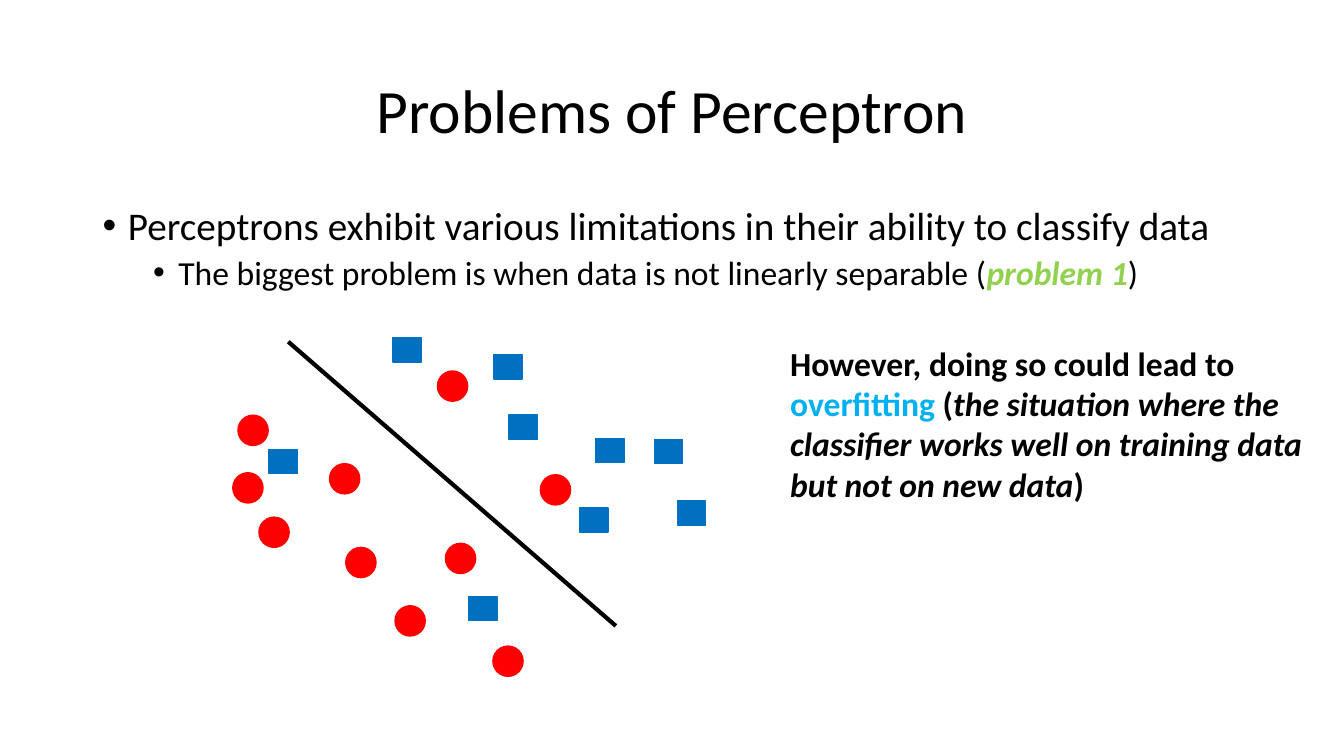
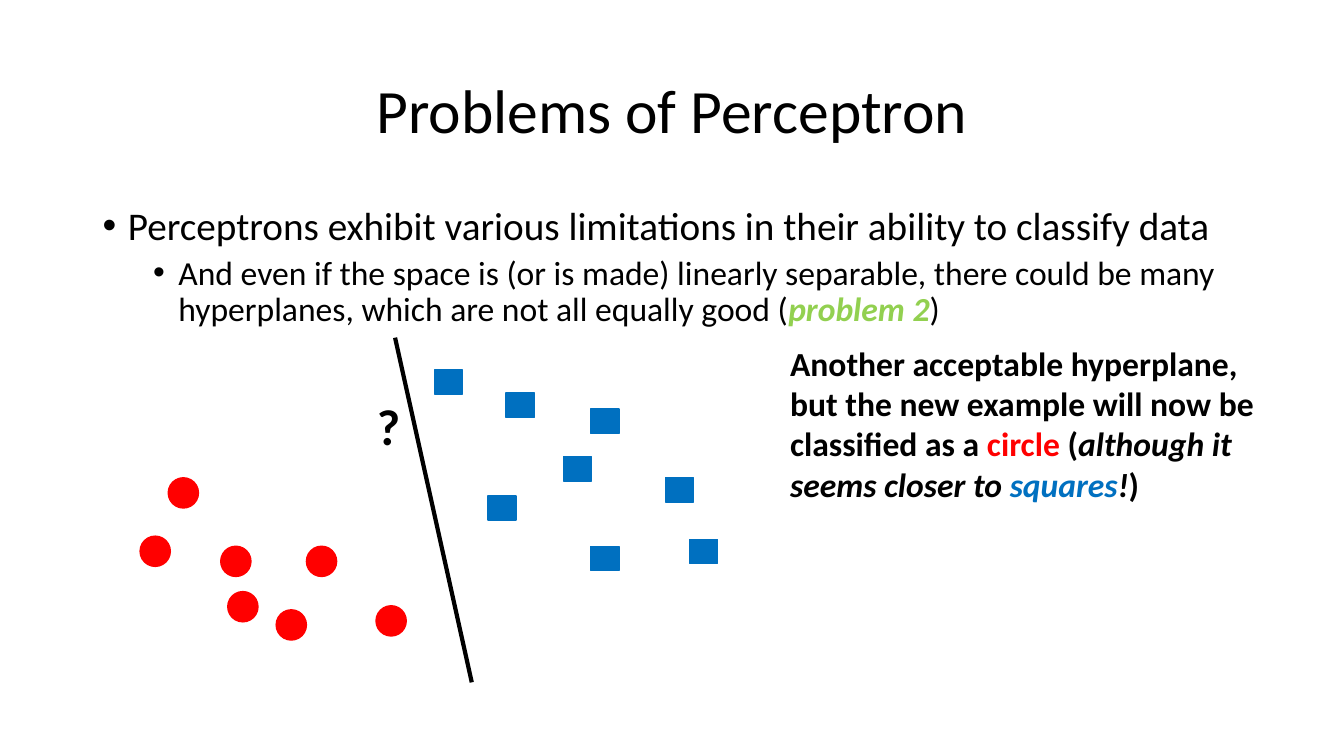
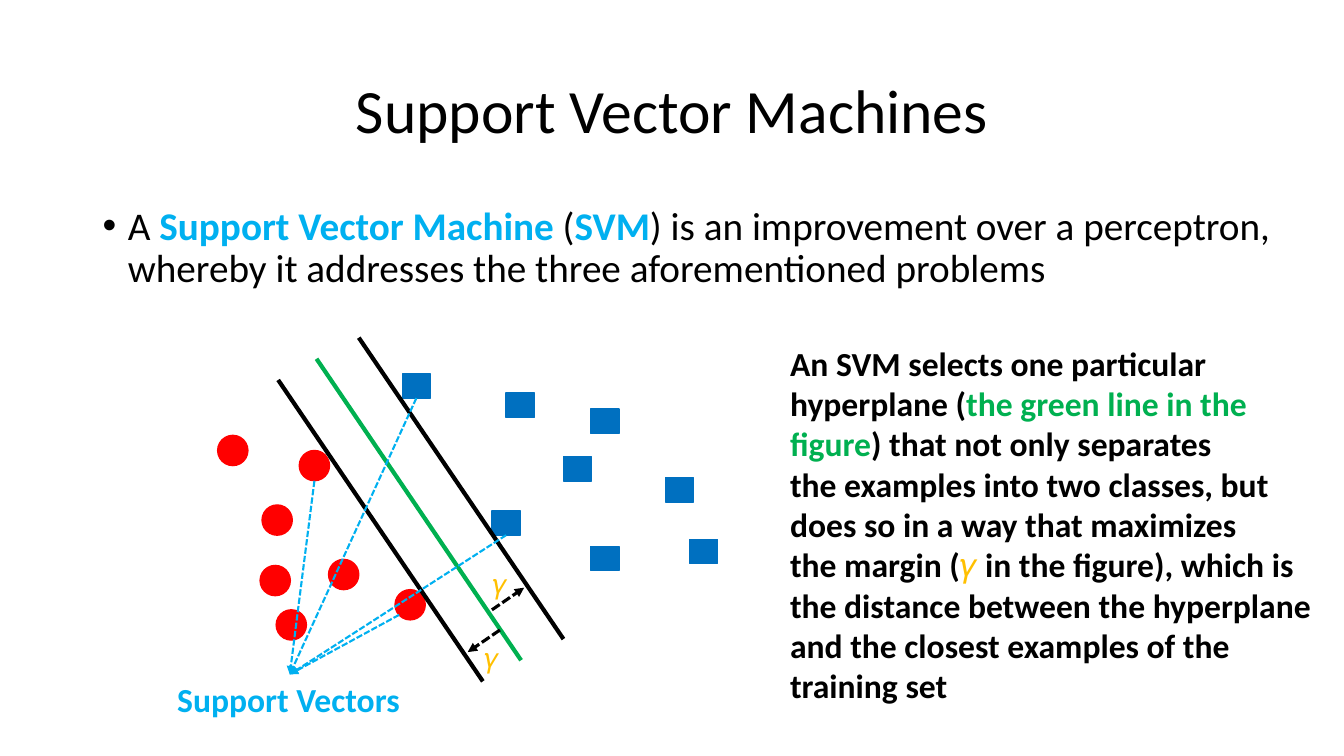
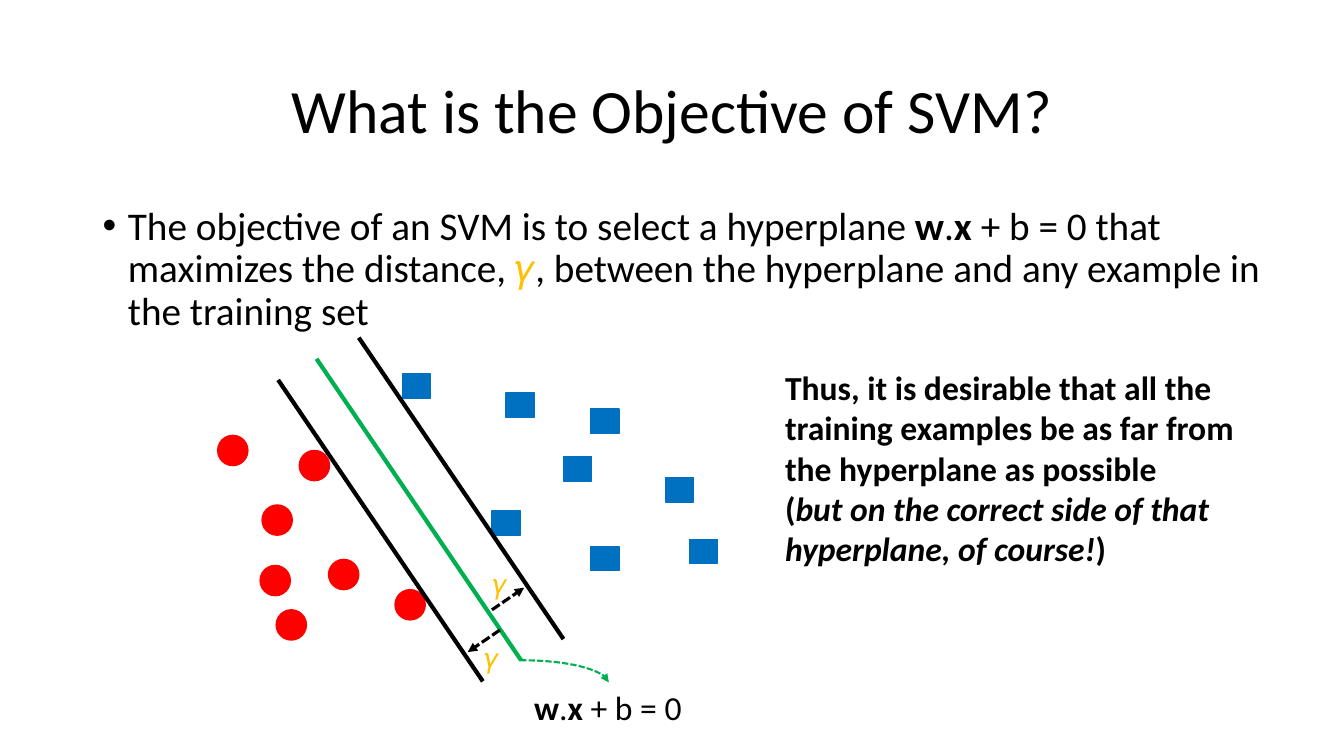
"""Build four slides on perceptron limits and support vector machines."""
from dataclasses import dataclass

from lxml import etree
from pptx import Presentation
from pptx.dml.color import RGBColor
from pptx.enum.dml import MSO_LINE
from pptx.enum.shapes import MSO_CONNECTOR, MSO_SHAPE
from pptx.enum.text import MSO_ANCHOR, MSO_AUTO_SIZE, PP_ALIGN
from pptx.oxml.ns import qn
from pptx.util import Pt

OVAL, RECT = MSO_SHAPE.OVAL, MSO_SHAPE.RECTANGLE
STRAIGHT, CURVE = MSO_CONNECTOR.STRAIGHT, MSO_CONNECTOR.CURVE
DASH = MSO_LINE.SQUARE_DOT
CENTER, MIDDLE = PP_ALIGN.CENTER, MSO_ANCHOR.MIDDLE
FIXED, GROW = MSO_AUTO_SIZE.NONE, MSO_AUTO_SIZE.SHAPE_TO_FIT_TEXT
TOP, BOTTOM = 0, 2


@dataclass(frozen=True)
class Theme:
    font: str = "Calibri"
    black: str = "000000"
    red: str = "FF0000"
    blue: str = "0070C0"
    cyan: str = "00B0F0"
    lime: str = "92D050"
    green: str = "00B050"
    gold: str = "FFC000"
    title: float = 44
    levels: tuple = (28, 24)
    note: float = 24
    gamma: float = 20
    query: float = 36
    boundary: float = 3
    margin: float = 2.25
    leader: float = 1.5


T = Theme()

SLIDE_SIZE = (960, 540)
TITLE_BOX = (66.2, 28.8, 828, 104.4)
BODY_BOX = (66.2, 144, 853.9, 343.4)
CIRCLE, SQUARE = (21.6, 21.6), (20.2, 17.3)
INDENTS, HANGING, SPACE_BEFORE = (18, 54), 18, (10, 5)

PLAIN = {}
BOLD = dict(bold=True)
ITALIC = dict(bold=True, italic=True)
TERM = dict(bold=True, color=T.cyan)
PROBLEM = dict(bold=True, italic=True, color=T.lime)
GAMMA = ("𝛾", dict(bold=True, color=T.gold))
EQUATION = [("w", BOLD), (".", PLAIN), ("x", BOLD), (" + b = 0", PLAIN)]
LIMITS = [("Perceptrons exhibit various limitations in their ability to classify data", PLAIN)]

SHARED_SQUARES = [(361.4, 280.8), (402.5, 326.2), (421.9, 292.3),
                  (421.9, 390.2), (475.2, 341.3), (492.5, 385.2)]
SVM = dict(
    circles=[(213.8, 321.8), (187.2, 360.7), (155.5, 311), (185.8, 403.9),
             (234.7, 399.6), (197.3, 435.6), (282.2, 421.2)],
    squares=[(287.3, 267.1), (351.4, 365), *SHARED_SQUARES],
    lines=[((198.7, 271.4), (344.9, 486.7), T.black),
           ((256.3, 241.2), (402.5, 456.5), T.black),
           ((226.1, 256.3), (372.2, 471.6), T.green)],
    margins=[((351.4, 435.6), (374.4, 419.8)), ((357.1, 450), (334.1, 465.8))],
    labels=[((344.9, 401, 25.2, 31.7), [GAMMA], T.gamma),
            ((339.1, 454.3, 25.2, 31.7), [GAMMA], T.gamma)],
)

SLIDES = [
    dict(
        title="Problems of Perceptron",
        body=[LIMITS,
              [("The biggest problem is when data is not linearly separable (", PLAIN),
               ("problem 1", PROBLEM), (")", PLAIN)]],
        note=((557.3, 241.2, 388.8, 123.8),
              [("However, doing so could lead to\n", BOLD), ("overfitting", TERM), (" (", BOLD),
               ("the situation where the\nclassifier works well on training data\n"
                "but not on new data", ITALIC), (")", BOLD)]),
        circles=[(170, 296.6), (386, 339.1), (235.4, 331.2), (312.5, 265), (247, 391),
                 (318.2, 388.1), (185, 369.4), (282.2, 432.7), (352.1, 461.5), (166.3, 337.7)],
        squares=[(352.8, 253.4), (334.8, 426.2), (192.2, 321.1), (414, 362.9), (467.3, 313.9),
                 (483.8, 357.8), (280.8, 241.2), (363.6, 296.6), (425.5, 313.2)],
        lines=[((205.9, 244.1), (439.9, 447.1), T.black)],
    ),
    dict(
        title="Problems of Perceptron",
        body=[LIMITS,
              [("And even if the space is (or is made) linearly separable, there could be many "
                "hyperplanes, which are not all equally good (", PLAIN),
               ("problem 2", PROBLEM), (")", PLAIN)]],
        note=((557.3, 241.2, 354.2, 123.8),
              [("Another acceptable hyperplane,\nbut the new example will now be\n"
                "classified as a ", BOLD), ("circle", dict(bold=True, color=T.red)),
               (" (", BOLD), ("although it\nseems closer to ", ITALIC),
               ("squares", dict(bold=True, italic=True, color=T.blue)),
               ("!", ITALIC), (")", BOLD)]),
        circles=[(120.2, 341.3), (100.1, 383), (157.7, 390.2), (162.7, 422.6),
                 (218.9, 390.2), (197.3, 435.6), (268.6, 432.7)],
        squares=[(310.3, 264.2), (348.5, 354.2), *SHARED_SQUARES],
        lines=[((282.2, 241.2), (337, 487.4), T.black)],
        labels=[((262.1, 278.6, 31.7, 51.1), [("?", BOLD)], T.query)],
    ),
    dict(
        SVM,
        title="Support Vector Machines",
        body=[[("A ", PLAIN), ("Support Vector Machine ", TERM), ("(", PLAIN), ("SVM", TERM),
               (") is an improvement over a perceptron, whereby it addresses the three "
                "aforementioned problems", PLAIN)]],
        note=((557.3, 241.2, 396, 269.3),
              [("An SVM selects one particular\nhyperplane (", BOLD),
               ("the green line in the\nfigure", dict(bold=True, color=T.green)),
               (") that not only separates\nthe examples into two classes, but\n"
                "does so in a way that maximizes\nthe margin (", BOLD), GAMMA,
               (" in the figure), which is\nthe distance between the hyperplane\n"
                "and the closest examples of the\ntraining set", BOLD)]),
        callout=dict(box=(119.5, 481.7, 175, 36), runs=[("Support Vectors", TERM)],
                     color=T.cyan, kind=STRAIGHT, squares=[0, 1],
                     points=[(224.6, 343.4), (285.1, 439.2)]),
    ),
    dict(
        SVM,
        title="What is the Objective of SVM?",
        body=[[("The objective of an SVM is to select a hyperplane ", PLAIN), *EQUATION,
               (" that maximizes the distance, ", PLAIN), GAMMA,
               (", between the hyperplane and any example in the training set", PLAIN)]],
        note=((553.7, 258.5, 343.4, 152.6),
              [("Thus, it is desirable that all the\ntraining examples be as far from\n"
                "the hyperplane as possible\n(", BOLD),
               ("but on the correct side of that\nhyperplane, of course!", ITALIC),
               (")", BOLD)]),
        callout=dict(box=(374.4, 487.4, 121, 36), runs=EQUATION, color=T.green,
                     kind=CURVE, squares=[], points=[(371.5, 471.6)]),
    ),
]


def pts(values):
    return [Pt(v) for v in values]


def add_text(p, text, size=T.note, color=T.black, bold=False, italic=False):
    for i, line in enumerate(text.split("\n")):
        if i:
            p.add_line_break()
        if line:
            r = p.add_run()
            r.text = line
            f = r.font
            f.name, f.size, f.bold, f.italic = T.font, Pt(size), bold, italic
            f.color.rgb = RGBColor.from_string(color)


def add_runs(p, runs, size):
    for text, fmt in runs:
        add_text(p, text, size=size, **fmt)


def add_label(s, box, runs, size=T.note):
    sp = s.shapes.add_textbox(*pts(box))
    tf = sp.text_frame
    tf.word_wrap, tf.auto_size = False, GROW
    add_runs(tf.paragraphs[0], runs, size)
    return sp


def add_mark(s, kind, at, size, color):
    sp = s.shapes.add_shape(kind, *pts(at + size))
    sp.shadow.inherit = False
    sp.fill.solid()
    sp.fill.fore_color.rgb = sp.line.color.rgb = RGBColor.from_string(color)
    sp.line.width = Pt(1)
    return sp


def add_line(s, start, end, color, width, arrow=False, kind=STRAIGHT):
    cx = s.shapes.add_connector(kind, *pts(start + end))
    cx.line.color.rgb = RGBColor.from_string(color)
    cx.line.width = Pt(width)
    sp_pr = cx._element.spPr
    if arrow:
        cx.line.dash_style = DASH
        etree.SubElement(sp_pr.find(qn("a:ln")), qn("a:tailEnd"), type="triangle")
    if kind == CURVE:
        sp_pr.find(qn("a:prstGeom")).set("prst", "curvedConnector2")
    etree.SubElement(sp_pr, qn("a:effectLst"))
    return cx


def add_callout(s, marks, box, runs, color, kind, squares, points):
    label = add_label(s, box, runs)
    end = (box[0] + box[2] / 2, box[1])
    for i in squares:
        cx = add_line(s, end, end, color, T.leader, True, kind)
        cx.begin_connect(marks[i], BOTTOM)
        cx.end_connect(label, TOP)
    for start in points:
        cx = add_line(s, start, end, color, T.leader, True, kind)
        cx.end_connect(label, TOP)


def fill_title(sp, text):
    tf = sp.text_frame
    tf.auto_size, tf.vertical_anchor = FIXED, MIDDLE
    p = tf.paragraphs[0]
    p.alignment, p.line_spacing = CENTER, 0.9
    add_text(p, text, size=T.title)


def fill_body(sp, items):
    tf = sp.text_frame
    tf.auto_size = FIXED
    for level, runs in enumerate(items):
        p = tf.add_paragraph() if level else tf.paragraphs[0]
        p.level, p.line_spacing, p.space_before = level, 0.9, Pt(SPACE_BEFORE[level])
        p_pr = p._p.get_or_add_pPr()
        p_pr.set("marL", str(Pt(INDENTS[level])))
        p_pr.set("indent", str(-Pt(HANGING)))
        etree.SubElement(p_pr, qn("a:buFont"), typeface="Arial")
        etree.SubElement(p_pr, qn("a:buChar"), char="•")
        add_runs(p, runs, T.levels[level])


def build_slide(prs, layout, data):
    s = prs.slides.add_slide(layout)
    fill_title(s.shapes.title, data["title"])
    fill_body(s.placeholders[1], data["body"])
    add_label(s, *data["note"])
    for at in data["circles"]:
        add_mark(s, OVAL, at, CIRCLE, T.red)
    squares = [add_mark(s, RECT, at, SQUARE, T.blue) for at in data["squares"]]
    for start, end, color in data["lines"]:
        add_line(s, start, end, color, T.boundary)
    for start, end in data.get("margins", []):
        add_line(s, start, end, T.black, T.margin, arrow=True)
    for label in data.get("labels", []):
        add_label(s, *label)
    if "callout" in data:
        add_callout(s, squares, **data["callout"])


def main():
    prs = Presentation()
    prs.slide_width, prs.slide_height = pts(SLIDE_SIZE)
    layout = prs.slide_layouts[1]
    for sp, box in zip(layout.placeholders, (TITLE_BOX, BODY_BOX)):
        sp.left, sp.top, sp.width, sp.height = pts(box)
    for data in SLIDES:
        build_slide(prs, layout, data)
    prs.save("out.pptx")


if __name__ == "__main__":
    main()
